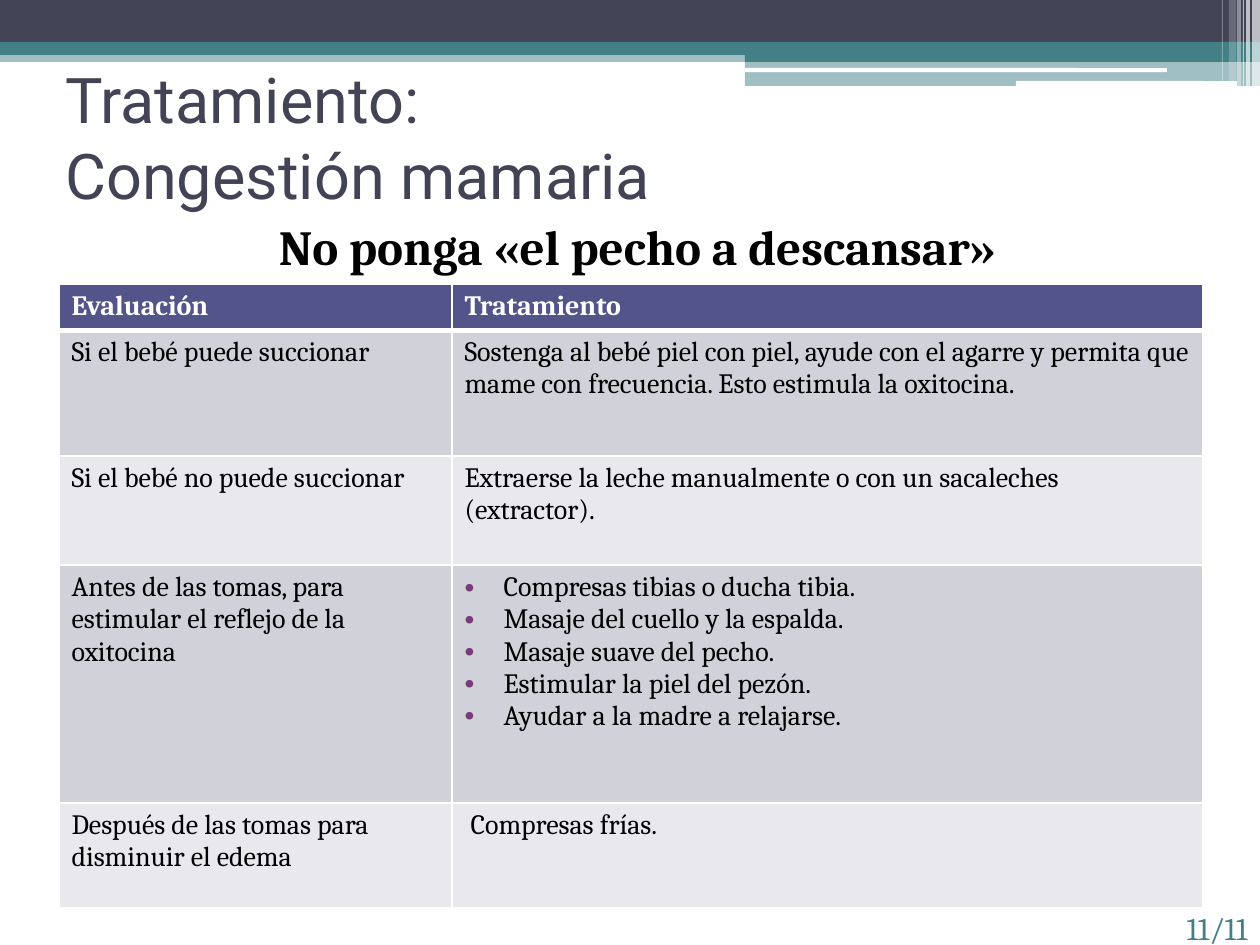
"""Build a slide on treating breast engorgement: header bands, titles and a table."""
from lxml.etree import SubElement
from pptx import Presentation
from pptx.dml.color import RGBColor
from pptx.enum.shapes import MSO_SHAPE
from pptx.enum.text import MSO_ANCHOR, PP_ALIGN
from pptx.oxml import parse_xml
from pptx.oxml.ns import nsdecls, qn
from pptx.util import Pt

SCALE = 914400 / 126
WIDTH, HEIGHT = 1260, 945

WHITE = RGBColor(0xFF, 0xFF, 0xFF)
BLACK = RGBColor(0, 0, 0)
SLATE = RGBColor(0x42, 0x44, 0x56)
TEAL = RGBColor(0x43, 0x80, 0x86)
HEADER = RGBColor(0x53, 0x54, 0x8A)
ROW_FILLS = [RGBColor(0xE9, 0xE9, 0xED), RGBColor(0xD1, 0xD1, 0xDA)]
BULLET = RGBColor(0x78, 0x3A, 0x7A)

RECTANGLE, ROUNDED = MSO_SHAPE.RECTANGLE, MSO_SHAPE.ROUNDED_RECTANGLE
BANDS = [
    (RECTANGLE, (0, 50, 1260, 12), TEAL, 50),
    (RECTANGLE, (0, 0, 1260, 43), SLATE, 100),
    (RECTANGLE, (0, 42, 1260, 13), TEAL, 100),
    (RECTANGLE, (745, 49, 515, 13), TEAL, 100),
    (RECTANGLE, (745, 61, 515, 25), TEAL, 50),
    (ROUNDED, (745, 68, 422, 4), WHITE, 100),
    (ROUNDED, (1016, 81, 221, 5), WHITE, 100),
]
STRIPES = [
    (1252, 8, 86, 65),
    (1246, 4, 86, 65),
    (1243, 1, 86, 60),
    (1237, 4, 86, 40),
    (1229, 7, 81, 20),
    (1222, 1, 81, 30),
]
TITLE = "Tratamiento: \vCongestión mamaria"
SUBTITLE = "No ponga «el pecho a descansar»"
PAGE = "11/11"

TABLE_LEFT, TABLE_TOP = 59, 284
COLUMN_WIDTHS = [393, 751]
ROW_HEIGHTS = [44, 126, 109, 238, 105]
ROWS = [
    ("Evaluación", "Tratamiento"),
    ("Si el bebé puede succionar",
     "Sostenga al bebé piel con piel, ayude con el agarre y permita que "
     "mame con frecuencia. Esto estimula la oxitocina."),
    ("Si el bebé no puede succionar",
     "Extraerse la leche manualmente o con un sacaleches (extractor)."),
    ("Antes de las tomas, para estimular el reflejo de la oxitocina",
     ["Compresas tibias o ducha tibia.",
      "Masaje del cuello y la espalda.",
      "Masaje suave del pecho.",
      "Estimular la piel del pezón.",
      "Ayudar a la madre a relajarse."]),
    ("Después de las tomas para disminuir el edema", " Compresas frías."),
]


def px(value):
    return round(value * SCALE)


def add_band(slide, kind, box, color, opacity):
    shape = slide.shapes.add_shape(kind, *map(px, box))
    shape.shadow.inherit = False
    shape.line.fill.background()
    shape.fill.solid()
    shape.fill.fore_color.rgb = color
    if opacity < 100:
        color_element = shape.fill._xPr.find(qn("a:solidFill"))[0]
        SubElement(color_element, qn("a:alpha"), val=str(opacity * 1000))


def style(paragraph, size, color, name="Cambria", bold=False):
    font = paragraph.font
    font.size, font.name, font.bold = Pt(size), name, bold
    font.color.rgb = color


def add_text(slide, box, text, size, color, name="Cambria", bold=False,
             align=PP_ALIGN.LEFT, anchor=MSO_ANCHOR.TOP):
    frame = slide.shapes.add_textbox(*map(px, box)).text_frame
    frame.word_wrap = True
    frame.vertical_anchor = anchor
    paragraph = frame.paragraphs[0]
    paragraph.text = text
    paragraph.alignment = align
    style(paragraph, size, color, name, bold)
    return paragraph


def indent(paragraph, margin, first_line=0):
    properties = paragraph._p.get_or_add_pPr()
    properties.set("marL", str(px(margin)))
    properties.set("indent", str(px(first_line)))
    return properties


def add_bullet(paragraph):
    properties = indent(paragraph, 39, -39)
    marks = [
        f'<a:buClr {nsdecls("a")}><a:srgbClr val="{BULLET}"/></a:buClr>',
        f'<a:buFont {nsdecls("a")} typeface="Arial"/>',
        f'<a:buChar {nsdecls("a")} char="•"/>',
    ]
    for position, mark in enumerate(marks):
        properties.insert(position, parse_xml(mark))


def add_borders(cell, widths):
    properties = cell._tc.get_or_add_tcPr()
    for position, (side, width) in enumerate(widths.items()):
        properties.insert(position, parse_xml(
            f'<a:ln{side} {nsdecls("a")} w="{Pt(width)}"><a:solidFill>'
            f'<a:srgbClr val="{WHITE}"/></a:solidFill></a:ln{side}>'))


def fill_cell(cell, content, row):
    bulleted = isinstance(content, list)
    cell.text = "\n".join(content) if bulleted else content
    for paragraph in cell.text_frame.paragraphs:
        style(paragraph, 16, BLACK if row else WHITE, bold=row == 0)
        if bulleted:
            add_bullet(paragraph)
    cell.fill.solid()
    cell.fill.fore_color.rgb = ROW_FILLS[row % 2] if row else HEADER
    add_borders(cell, {"L": 1, "R": 1, "T": 3 if row == 1 else 1,
                       "B": 1 if row else 3})


def add_treatment_table(slide):
    table = slide.shapes.add_table(
        len(ROWS), len(COLUMN_WIDTHS), px(TABLE_LEFT), px(TABLE_TOP),
        px(sum(COLUMN_WIDTHS)), px(sum(ROW_HEIGHTS))).table
    for column, width in zip(table.columns, COLUMN_WIDTHS):
        column.width = px(width)
    for index, (row, height) in enumerate(zip(table.rows, ROW_HEIGHTS)):
        row.height = px(height)
        for cell, content in zip(row.cells, ROWS[index]):
            fill_cell(cell, content, index)


def main():
    presentation = Presentation()
    presentation.slide_width, presentation.slide_height = px(WIDTH), px(HEIGHT)
    slide = presentation.slides.add_slide(presentation.slide_layouts[6])
    for band in BANDS:
        add_band(slide, *band)
    for left, width, height, opacity in STRIPES:
        add_band(slide, RECTANGLE, (left, 0, width, height), WHITE, opacity)
    add_text(slide, (53, 63, 1134, 147), TITLE, 36, SLATE, "Roboto",
             anchor=MSO_ANCHOR.MIDDLE)
    subtitle = add_text(slide, (63, 210, 1134, 74), SUBTITLE, 28, BLACK,
                        bold=True, align=PP_ALIGN.CENTER)
    subtitle.space_before = Pt(3)
    indent(subtitle, 15)
    add_text(slide, (1081, 903, 179, 42), PAGE, 18, TEAL, align=PP_ALIGN.RIGHT)
    add_treatment_table(slide)
    presentation.save("out.pptx")


if __name__ == "__main__":
    main()
